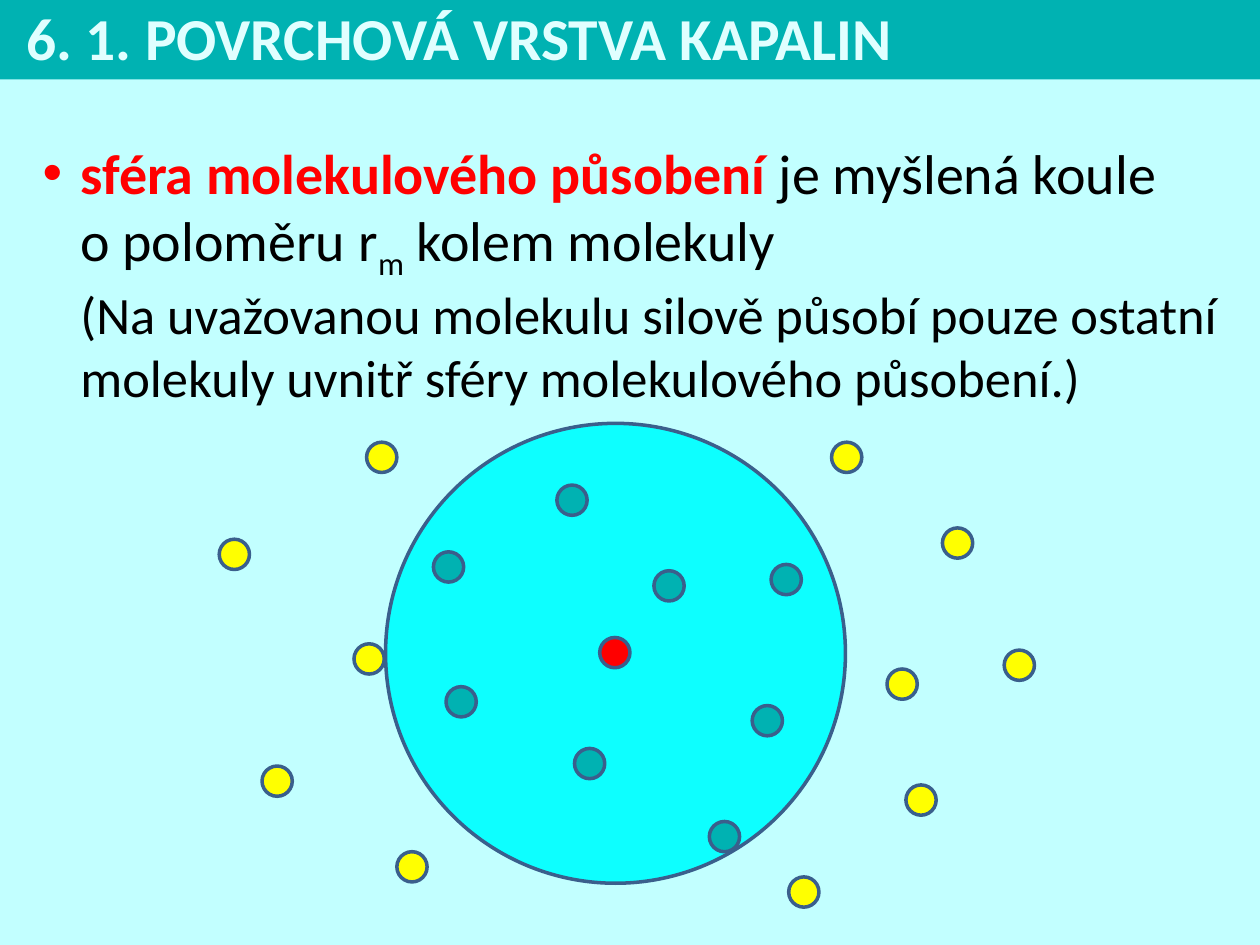
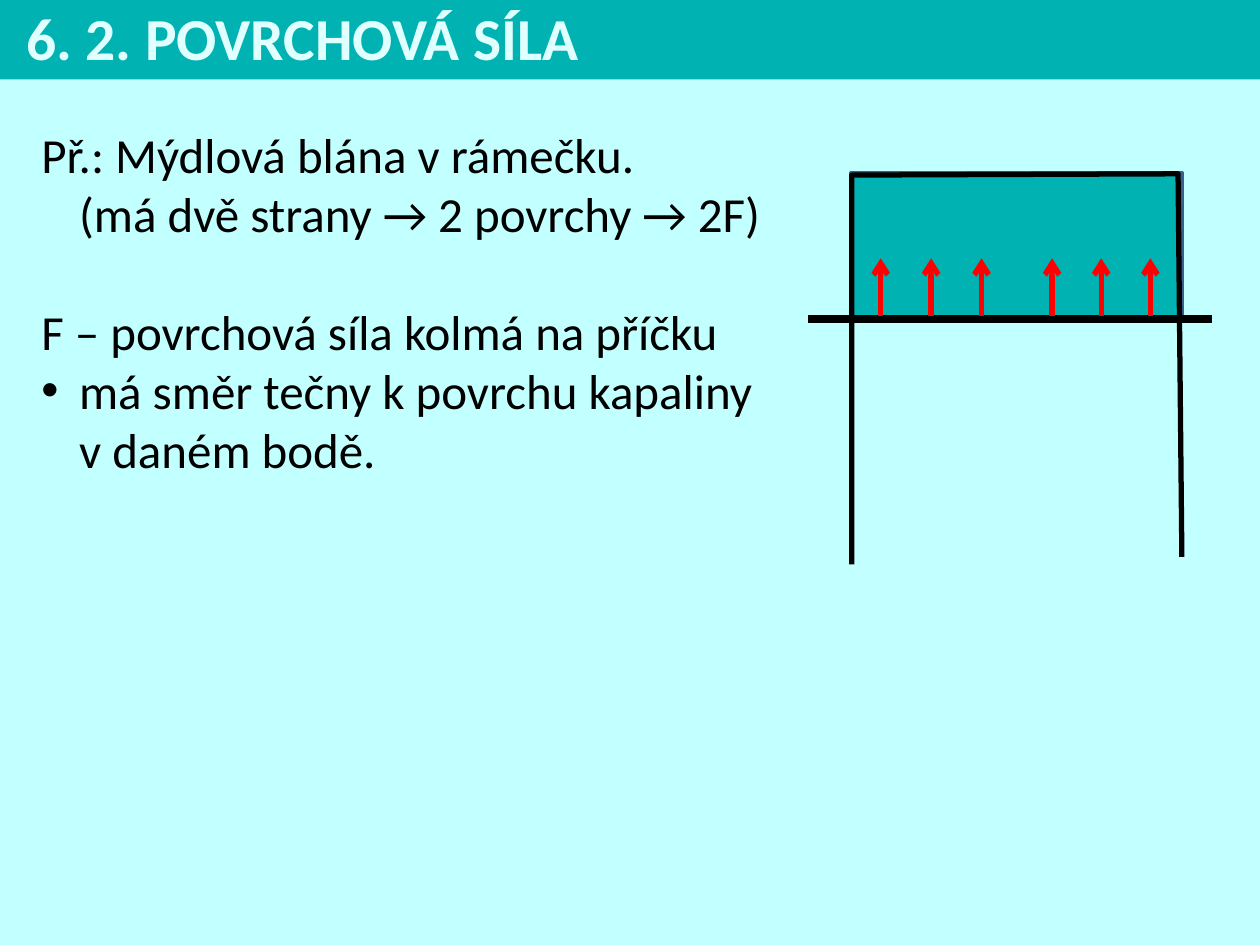
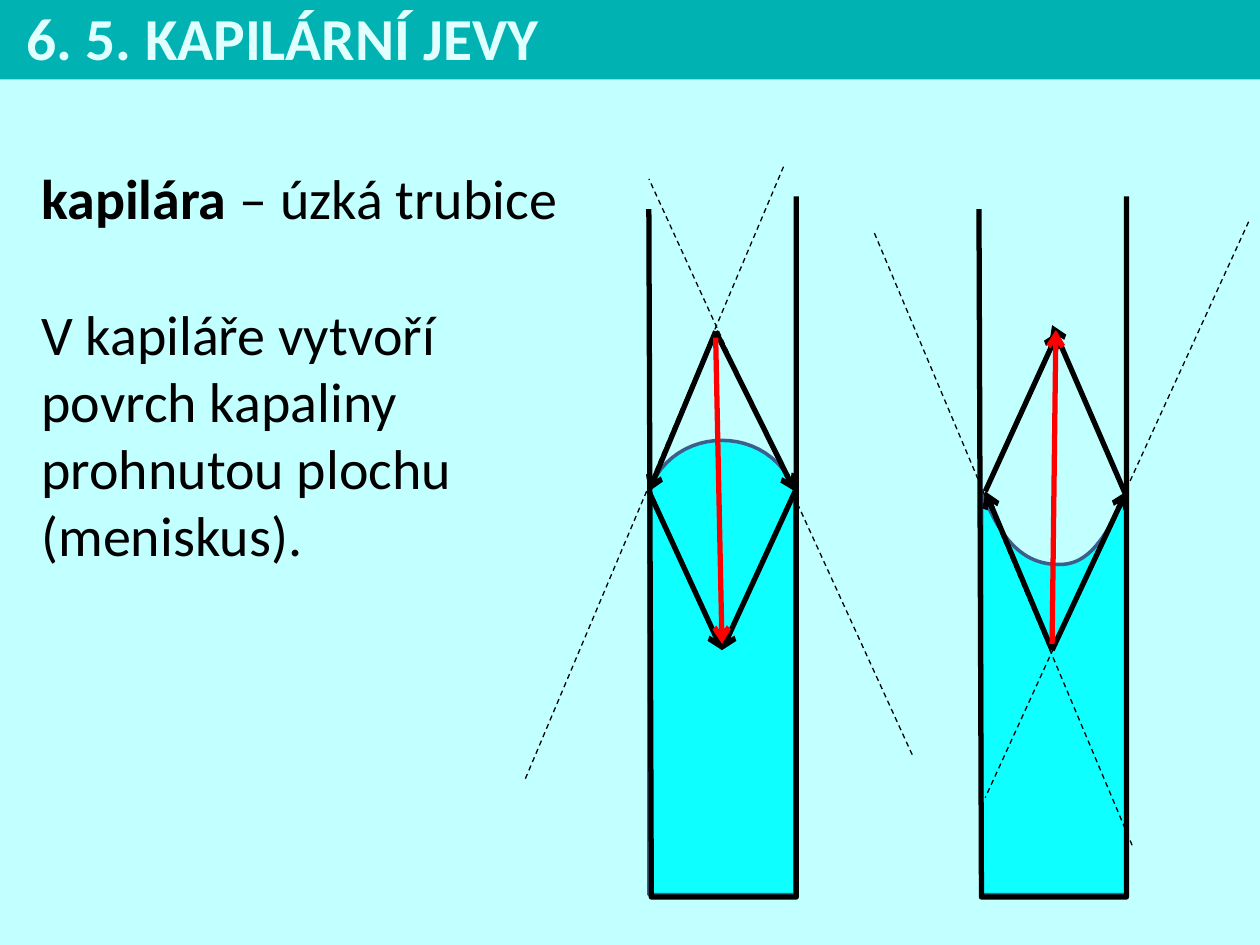
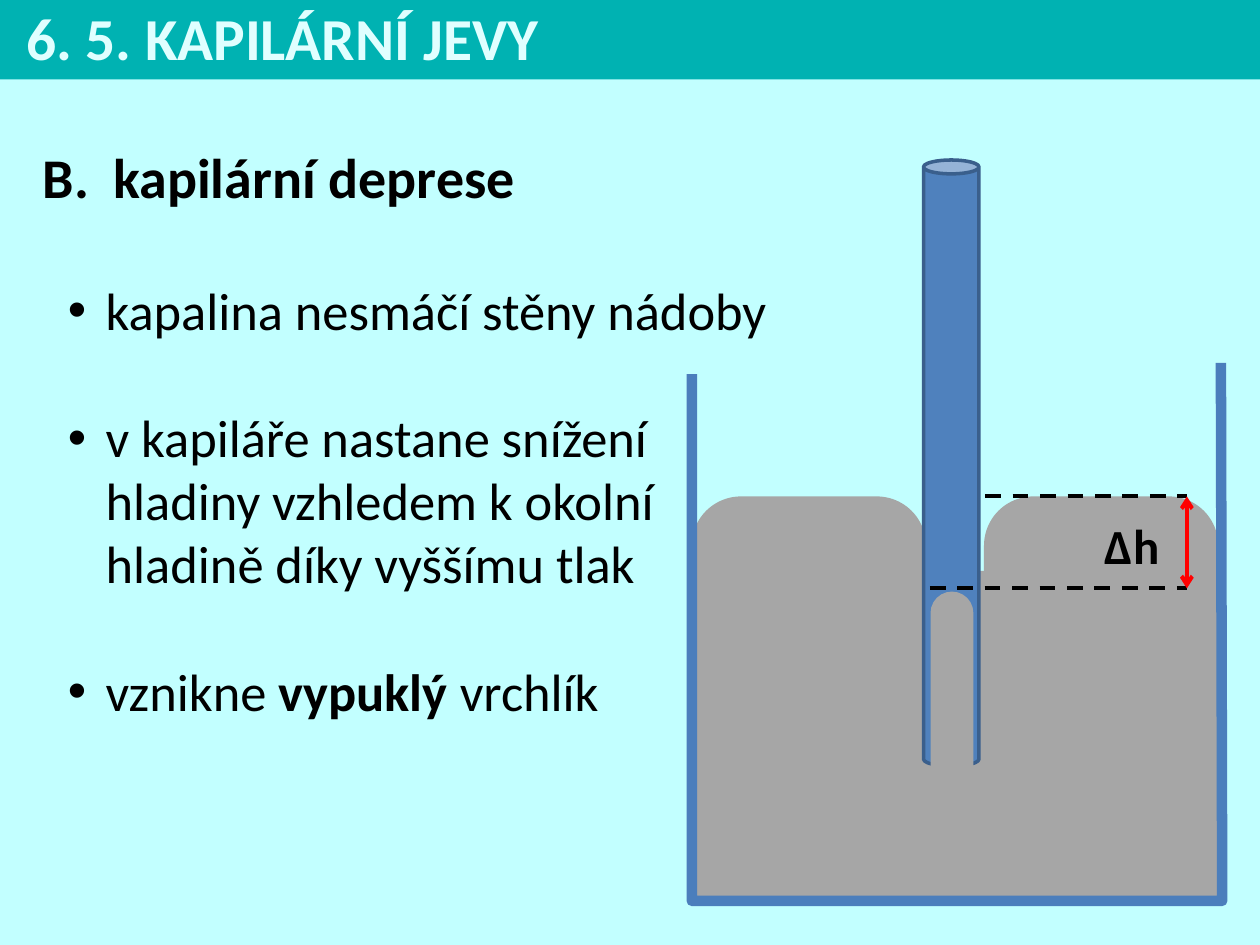
from dataclasses import dataclass

from lxml import etree
from pptx import Presentation
from pptx.dml.color import RGBColor
from pptx.enum.dml import MSO_LINE
from pptx.enum.shapes import MSO_CONNECTOR, MSO_SHAPE
from pptx.enum.text import MSO_ANCHOR, PP_ALIGN
from pptx.oxml.ns import qn
from pptx.util import Emu, Pt

PX = 9144  # one px is a hundredth of an inch
OVAL, RECT = MSO_SHAPE.OVAL, MSO_SHAPE.RECTANGLE
ROUND, CAN = MSO_SHAPE.ROUNDED_RECTANGLE, MSO_SHAPE.CAN
STRAIGHT, DASH = MSO_CONNECTOR.STRAIGHT, MSO_LINE.DASH
MIDDLE, TOP, LEFT = MSO_ANCHOR.MIDDLE, MSO_ANCHOR.TOP, PP_ALIGN.LEFT


@dataclass(frozen=True)
class Theme:
    font: str = "Calibri"
    page: str = "C2FFFF"
    band: str = "00B2B2"
    title: str = "E0FFFF"
    ink: str = "000000"
    red: str = "FF0000"
    yellow: str = "FFFF00"
    water: str = "0DFFFF"
    edge: str = "3A5F8C"
    gray: str = "A6A6A6"
    pipe: str = "4F81BD"
    glass: str = "4B7EBC"
    head: int = 34
    big: int = 32
    mid: int = 30
    small: int = 28


T = Theme()


# Basic parts
def emu(*values):
    return [Emu(round(v * PX)) for v in values]


def rgb(code):
    return RGBColor.from_string(code)


def paint(shape, fill=None, line=None, width=2):
    shape.shadow.inherit = False
    if fill:
        shape.fill.solid()
        shape.fill.fore_color.rgb = rgb(fill)
    else:
        shape.fill.background()
    if line:
        shape.line.color.rgb = rgb(line)
        shape.line.width = Pt(width)
    else:
        shape.line.fill.background()
    return shape


def form(slide, kind, box, fill, line=None, adj=None, turn=0):
    shape = slide.shapes.add_shape(kind, *emu(*box))
    if adj is not None:
        shape.adjustments[0] = adj
    shape.rotation = turn
    return paint(shape, fill, line)


def outline(slide, box, points, fill=None, line=T.ink, width=3):
    spots = [emu(box[0] + x, box[1] + y) for x, y in points]
    pen = slide.shapes.build_freeform(*spots[0], scale=1.0)
    pen.add_line_segments(spots[1:], close=bool(fill))
    return paint(pen.convert_to_shape(), fill, line, width)


def curve(a, b, c, d, steps=24):
    """Points along a cubic curve."""
    def mix(t, axis):
        s = 1 - t
        return (s**3 * a[axis] + 3 * s * s * t * b[axis]
                + 3 * s * t * t * c[axis] + t**3 * d[axis])
    return [(mix(i / steps, 0), mix(i / steps, 1)) for i in range(steps + 1)]


def stroke(slide, box, ends, color=T.ink, width=3, dash=False, tips=()):
    x1, y1, x2, y2 = ends
    x, y = box[:2]
    link = slide.shapes.add_connector(
        STRAIGHT, *emu(x + x1, y + y1, x + x2, y + y2))
    link.line.color.rgb = rgb(color)
    link.line.width = Pt(width)
    if dash:
        link.line.dash_style = DASH
    props = link._element.spPr
    for tip in tips:
        etree.SubElement(props.find(qn("a:ln")), qn(f"a:{tip}End"), type="arrow")
    etree.SubElement(props, qn("a:effectLst"))


# Text: a paragraph is a list of (text, format) runs plus its own settings
def run(para, text, size=T.small, color=T.ink, bold=False, base=0):
    for i, line in enumerate(text.split("\n")):
        if i:
            para.add_line_break()
        if line:
            part = para.add_run()
            part.text = line
            font = part.font
            font.name, font.size, font.bold = T.font, Pt(size), bold
            font.color.rgb = rgb(color)
            if base:
                font._element.set("baseline", str(base * 1000))


def write(frame, paras, anchor=TOP):
    frame.word_wrap = True
    frame.vertical_anchor = anchor
    for i, (runs, style) in enumerate(paras):
        para = frame.add_paragraph() if i else frame.paragraphs[0]
        para.alignment = LEFT
        para.space_before = Pt(style.get("gap", 0))
        props = para._p.get_or_add_pPr()
        left, first = emu(style.get("left", 0), style.get("first", 0))
        props.set("marL", str(left))
        props.set("indent", str(first))
        if "bullet" in style:
            etree.SubElement(props, qn("a:buFont"), typeface="Arial")
            etree.SubElement(props, qn("a:buChar"), char=style["bullet"])
        elif "start" in style:
            etree.SubElement(props, qn("a:buAutoNum"), type="alphaUcPeriod",
                             startAt=str(style["start"]))
        else:
            etree.SubElement(props, qn("a:buNone"))
        for text, look in runs:
            run(para, text, **look)


def note(slide, box, paras):
    write(slide.shapes.add_textbox(*emu(*box)).text_frame, paras)


def page(deck, title):
    slide = deck.slides.add_slide(deck.slide_layouts[6])
    slide.background.fill.solid()
    slide.background.fill.fore_color.rgb = rgb(T.page)
    band = form(slide, RECT, (0, -4, 1000, 67), T.band)
    look = dict(size=T.head, color=T.title, bold=True)
    write(band.text_frame, [([(title, look)], dict(left=11))], MIDDLE)
    return slide


# Sphere of molecular action
def sphere(slide, box):
    form(slide, OVAL, box, T.water, T.edge)
    inner = [(136, 49), (38, 102), (48, 209), (291, 224),
             (306, 112), (213, 117), (150, 258), (257, 316)]
    outer = [(354, 15), (442, 83), (491, 180), (398, 195), (413, 287),
             (320, 360), (-132, 92), (-15, 15), (-25, 175), (-98, 272), (9, 340)]
    for color, spots in ((T.red, [(170, 170)]), (T.band, inner), (T.yellow, outer)):
        for x, y in spots:
            form(slide, OVAL, (box[0] + x, box[1] + y, 24, 24), color, T.edge)


def layer(deck):
    slide = page(deck, "6. 1. POVRCHOVÁ VRSTVA KAPALIN")
    sphere(slide, (306, 336, 365, 365))
    big = dict(size=T.big)
    note(slide, (24, 105, 953, 273), [([
        ("sféra molekulového působení ", dict(size=T.big, color=T.red, bold=True)),
        ("je myšlená koule \no poloměru r", big),
        ("m", dict(size=T.big, base=-25)),
        (" kolem molekuly\n", big),
        ("(Na uvažovanou molekulu silově působí pouze ostatní molekuly "
         "uvnitř sféry molekulového působení.)", dict(size=T.mid)),
    ], dict(left=30, first=-30, bullet="•"))])


# Soap film in a frame
def film(slide, box):
    form(slide, ROUND, box, T.band, T.edge, adj=0)
    outline(slide, box, [(1, 311), (1, 2), (260, 1), (263, 305)])
    stroke(slide, box, (-34, 116, 287, 116), width=4.5)
    for start, step in ((24, 40), (160, 39)):
        for i in range(3):
            x = start + i * step
            stroke(slide, box, (x, 114, x, 68), T.red, tips=["tail"])


def force(deck):
    slide = page(deck, "6. 2. POVRCHOVÁ SÍLA")
    hang = dict(left=30, first=-30)
    note(slide, (23, 94, 953, 293), [
        ([("Př.: Mýdlová blána v rámečku. \n(má dvě strany → 2 povrchy → 2F)", {})],
         hang),
        ([("F – povrchová síla kolmá na příčku", {})], dict(hang, gap=34)),
        ([("má směr tečny k povrchu kapaliny \nv daném bodě.", {})],
         dict(hang, bullet="•")),
    ])
    film(slide, (675, 137, 263, 115))


# Capillary with its forces
def tube(slide, box, water, forces, total, guides, under):
    def rays():
        for ends in guides:
            stroke(slide, box, ends, width=0.75, dash=True)

    wide, high = box[2:]
    if under:
        rays()
    outline(slide, box, water, T.water, T.edge, 2)
    outline(slide, box, [(wide, 0), (wide, high), (2, high), (0, 10)])
    for ends in forces:
        stroke(slide, box, ends, tips=["tail"])
    stroke(slide, box, total, T.red, tips=["tail"])
    if not under:
        rays()


def tubes(deck):
    slide = page(deck, "6. 5. KAPILÁRNÍ JEVY")
    big = dict(size=T.big)
    note(slide, (23, 125, 977, 387), [
        ([("kapilára", dict(big, bold=True)), (" – úzká trubice", big)], {}),
        ([("V kapiláře vytvoří \npovrch kapaliny \nprohnutou plochu \n(meniskus).",
           big)], dict(gap=39)),
    ])
    dome = curve((0, 234), (19, 180), (97, 180), (116, 234))
    tube(slide, (515, 156, 117, 556), dome + [(116, 554), (0, 554)],
         [(116, 234, 58, 360), (0, 234, 58, 360),
          (53, 107, 0, 234), (53, 107, 116, 234)],
         (53, 112, 58, 355),
         [(-98, 462, 107, -24), (209, 443, 0, -14)], under=True)
    bowl = (curve((2, 233), (21, 285), (45, 292), (64, 292))
            + curve((64, 292), (83, 292), (99, 278), (117, 233))[1:])
    tube(slide, (777, 156, 117, 556), bowl + [(117, 554), (2, 554)],
         [(117, 238, 58, 102), (5, 234, 63, 107),
          (58, 360, 5, 234), (58, 360, 117, 234)],
         (58, 355, 61, 106),
         [(-83, 29, 122, 516), (214, 20, 5, 477)], under=False)


# Vessel with a lowered level in the pipe
def vessel(slide, box):
    x, y = box[:2]

    def part(kind, left, top, wide, high, fill=T.gray, **look):
        form(slide, kind, (x + left, y + top, wide, high), fill, **look)

    part(RECT, 4, 170, 413, 258)
    part(ROUND, 0, 165, 418, 258, adj=0.31)
    for left in (0, 232):
        part(ROUND, left, 106, 186, 316, adj=0.21)
    part(CAN, 184, -161, 44, 481, T.pipe, line=T.edge)
    part(ROUND, 97, 274, 219, 34, adj=0.5, turn=90)
    for left, level in ((189, 179), (233, 106)):
        stroke(slide, box, (left, level, 393, level), width=2.25, dash=True)
    note(slide, (x + 318, y + 116, 70, 57), [([("∆h", dict(bold=True))], {})])
    stroke(slide, box, (393, 106, 393, 179), T.red, 2.25, tips=["head", "tail"])
    outline(slide, box, [(0, 9), (0, 427), (421, 427), (420, 0)],
            line=T.glass, width=6)


def drop(deck):
    slide = page(deck, "6. 5. KAPILÁRNÍ JEVY")
    mid = dict(size=T.mid)
    item = dict(left=50, first=-30, bullet="•", gap=37)
    note(slide, (24, 108, 612, 471), [
        ([("kapilární deprese", dict(size=T.big, bold=True))],
         dict(left=56, first=-56, start=2)),
        ([("kapalina nesmáčí stěny nádoby", mid)], dict(item, gap=39)),
        ([("v kapiláře nastane snížení hladiny vzhledem k okolní "
           "hladině díky vyššímu tlak", mid)], item),
        ([("vznikne ", mid), ("vypuklý", dict(mid, bold=True)),
          (" vrchlík", mid)], item),
    ])
    vessel(slide, (549, 288, 422, 428))


def main():
    deck = Presentation()
    deck.slide_width, deck.slide_height = emu(1000, 750)
    for build in (layer, force, tubes, drop):
        build(deck)
    deck.save("out.pptx")


if __name__ == "__main__":
    main()
